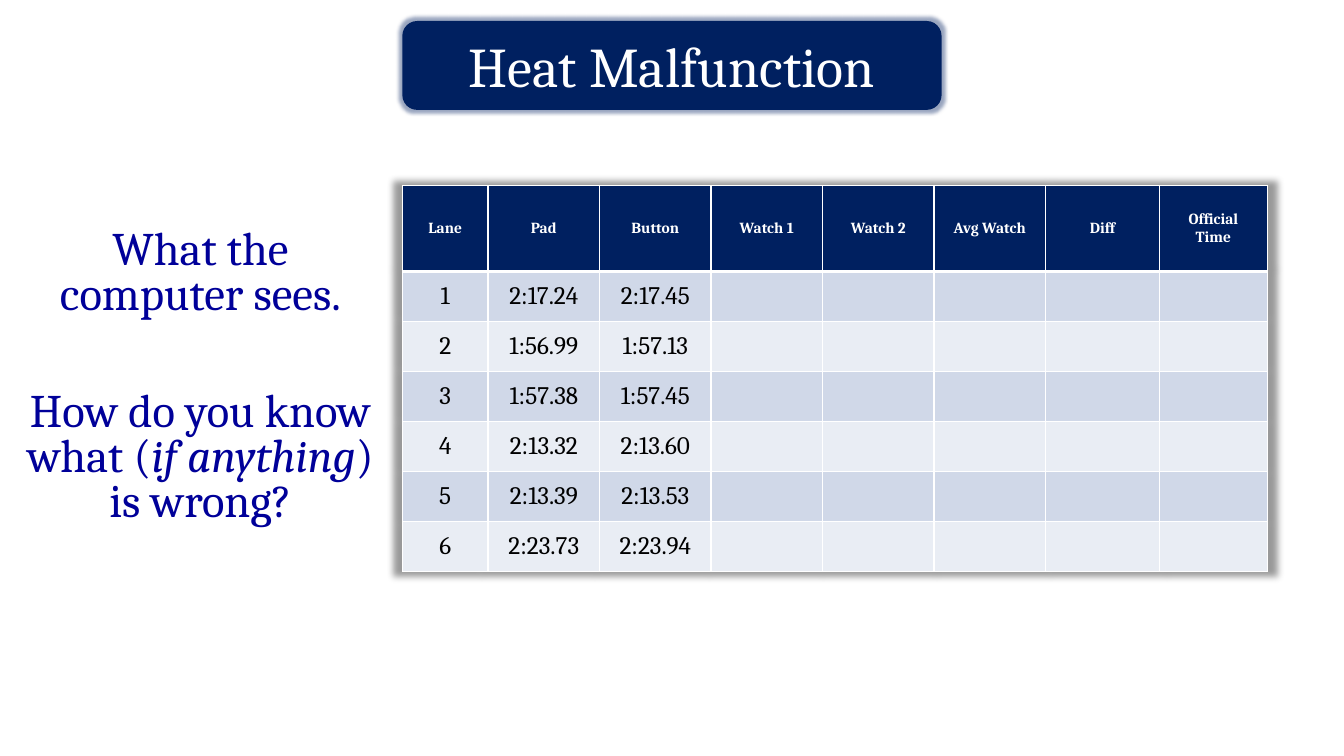
import pptx
import pptx.dml.color
import pptx.enum.shapes
import pptx.enum.text
import pptx.oxml
import pptx.util

Cm = pptx.util.Cm
Pt = pptx.util.Pt
NS = 'xmlns:a="http://schemas.openxmlformats.org/drawingml/2006/main"'


class Theme:
    font = "Cambria"
    navy, ink, white, black = "002060", "000099", "FFFFFF", "000000"
    bands = "D0D8E8", "E9EDF4"
    title, prose, head, body = 40, 33.3, 11, 18
    thin, thick = 1, 3


def rgb(code):
    return pptx.dml.color.RGBColor.from_string(code)


def write(frame, text, size, color, bold=False, lead=None, gap=0):
    """Fill a frame with centred text: one paragraph a line, *italic* between stars."""
    frame.word_wrap = True
    frame.vertical_anchor = pptx.enum.text.MSO_ANCHOR.MIDDLE
    for i, line in enumerate(text.split("\n")):
        para = frame.add_paragraph() if i else frame.paragraphs[0]
        para.alignment = pptx.enum.text.PP_ALIGN.CENTER
        if lead:
            para.line_spacing = lead
        if i:
            para.space_before = Pt(gap)
        para.font.size = Pt(size)
        for j, part in enumerate(line.split("*")):
            run = para.add_run()
            run.text = part
            run.font.name = Theme.font
            run.font.size = Pt(size)
            run.font.bold = bold
            run.font.italic = j % 2 == 1
            run.font.color.rgb = rgb(color)


deck = pptx.Presentation()
deck.slide_width, deck.slide_height = Cm(33.87), Cm(19.05)
slide = deck.slides.add_slide(deck.slide_layouts[6])
shapes = slide.shapes

# Table of times
heads = ["Lane", "Pad", "Button", "Watch 1", "Watch 2", "Avg Watch", "Diff", "Official Time"]
times = [
    ("2:17.24", "2:17.45"),
    ("1:56.99", "1:57.13"),
    ("1:57.38", "1:57.45"),
    ("2:13.32", "2:13.60"),
    ("2:13.39", "2:13.53"),
    ("2:23.73", "2:23.94"),
]
rows = [heads] + [[str(lane), *pair] + [""] * 5 for lane, pair in enumerate(times, 1)]
widths = [2.16] + [2.81] * 5 + [2.87, 2.72]
heights = [2.16] + [1.26] * len(times)

grid = shapes.add_table(len(rows), len(heads), Cm(10.14), Cm(4.68),
                        Cm(sum(widths)), Cm(sum(heights))).table
for col, width in zip(grid.columns, widths):
    col.width = Cm(width)
for row, height in zip(grid.rows, heights):
    row.height = Cm(height)

shade = pptx.oxml.parse_xml(
    f'<a:effectLst {NS}><a:outerShdw blurRad="63500" sx="102000" sy="102000" algn="ctr" '
    f'rotWithShape="0"><a:srgbClr val="{Theme.black}"><a:alpha val="40000"/></a:srgbClr>'
    f'</a:outerShdw></a:effectLst>')
grid._tbl.tblPr.insert(0, shade)

for r, row in enumerate(rows):
    for c, text in enumerate(row):
        cell = grid.cell(r, c)
        cell.vertical_anchor = pptx.enum.text.MSO_ANCHOR.MIDDLE
        props = cell._tc.get_or_add_tcPr()
        for side in ("lnL", "lnR", "lnT", "lnB"):
            rule = (r, side) in ((0, "lnB"), (1, "lnT"))
            edge = Pt(Theme.thick if rule else Theme.thin)
            props.append(pptx.oxml.parse_xml(
                f'<a:{side} {NS} w="{edge}"><a:solidFill><a:srgbClr val="{Theme.white}"/>'
                f'</a:solidFill></a:{side}>'))
        cell.fill.solid()
        cell.fill.fore_color.rgb = rgb(Theme.bands[(r - 1) % 2] if r else Theme.navy)
        if r == 0:
            write(cell.text_frame, text, Theme.head, Theme.white, bold=True)
        elif text:
            write(cell.text_frame, text, Theme.body, Theme.black)

# Questions at the left
prose = shapes.add_textbox(Cm(0.33), Cm(5.08), Cm(9.45), Cm(8.89))
write(prose.text_frame,
      "What the computer sees.\nHow do you know what (*if anything*) is wrong?",
      Theme.prose, Theme.ink, lead=0.8, gap=52)

# Title plate with a soft glow
plate = shapes.add_shape(pptx.enum.shapes.MSO_SHAPE.ROUNDED_RECTANGLE,
                         Cm(10.14), Cm(0.53), Cm(13.59), Cm(2.24))
plate.shadow.inherit = False
plate.fill.solid()
plate.fill.fore_color.rgb = rgb(Theme.navy)
plate.line.fill.background()
glow = pptx.oxml.parse_xml(
    f'<a:glow {NS} rad="63500"><a:srgbClr val="{Theme.navy}"><a:alpha val="40000"/>'
    f'</a:srgbClr></a:glow>')
plate._element.spPr.find(pptx.oxml.ns.qn("a:effectLst")).append(glow)
write(plate.text_frame, "Heat Malfunction", Theme.title, Theme.white)

deck.save("out.pptx")
